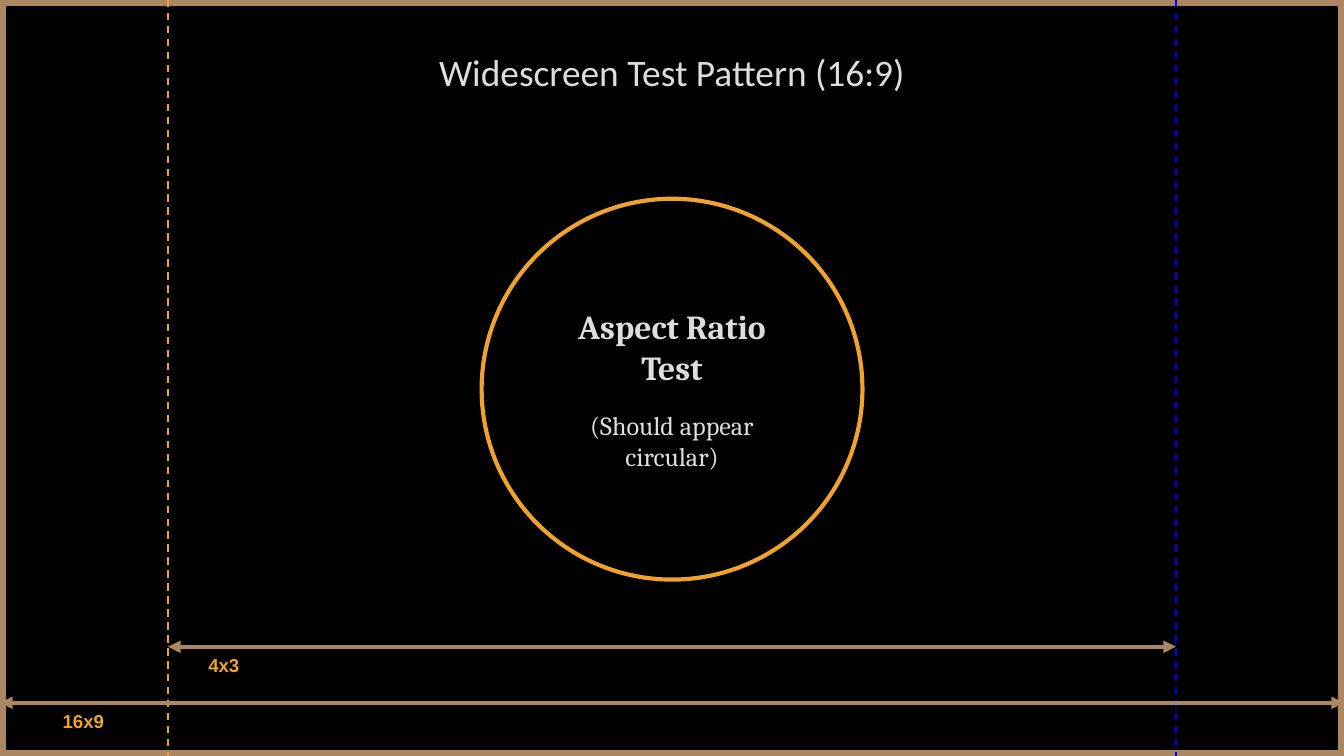
import pptx
import pptx.dml.color
import pptx.enum.dml
import pptx.enum.shapes
import pptx.enum.text
import pptx.oxml
import pptx.oxml.ns
import pptx.util

PX = 9525  # EMU per px, 96 px to the inch
WIDE, HIGH = 960, 540
TAN, GOLD, BLUE, PALE = "AC8660", "F0A22E", "0000FF", "DDDDDD"
SHAPE = pptx.enum.shapes.MSO_SHAPE
ALIGN = pptx.enum.text.PP_ALIGN
ANCHOR = pptx.enum.text.MSO_ANCHOR


def emu(*nums):
    return [pptx.util.Emu(round(n * PX)) for n in nums]


def rgb(code):
    return pptx.dml.color.RGBColor.from_string(code)


def write(para, text, font, size, color, bold=False, align=ALIGN.CENTER):
    para.alignment = align
    run = para.add_run()
    run.text = text
    run.font.name = font
    run.font.size = pptx.util.Pt(size)
    run.font.bold = bold
    run.font.color.rgb = rgb(color)


def outline(slide, kind, box, color, width):
    shape = slide.shapes.add_shape(kind, *emu(*box))
    shape.shadow.inherit = False
    shape.fill.background()
    shape.line.color.rgb = rgb(color)
    shape.line.width = pptx.util.Pt(width)
    return shape


def rule(slide, ends, color, width):
    line = slide.shapes.add_connector(
        pptx.enum.shapes.MSO_CONNECTOR.STRAIGHT, *emu(*ends))
    line.line.color.rgb = rgb(color)
    line.line.width = pptx.util.Pt(width)
    props = line.element.spPr
    props.append(pptx.oxml.parse_xml(
        "<a:effectLst %s/>" % pptx.oxml.ns.nsdecls("a")))
    return line


def title(slide, box):
    shape = slide.shapes.title
    shape.left, shape.top, shape.width, shape.height = emu(*box)
    frame = shape.text_frame
    frame.vertical_anchor = ANCHOR.TOP
    write(frame.paragraphs[0], "Widescreen Test Pattern (16:9)",
          "Calibri", 20, PALE)


def guide(slide, x, color):
    """Dashed upright line over the full height."""
    line = rule(slide, (x, 0, x, HIGH), color, 1)
    line.line.dash_style = pptx.enum.dml.MSO_LINE.DASH


def span(slide, left, right, y, text, indent):
    """Double-headed arrow with its ratio label below."""
    line = rule(slide, (left, y, right, y), TAN, 2.25)
    ends = line.line._get_or_add_ln()
    for name in ("headEnd", "tailEnd"):
        ends.append(pptx.oxml.parse_xml(
            '<a:%s %s type="triangle"/>' % (name, pptx.oxml.ns.nsdecls("a"))))
    label = slide.shapes.add_textbox(*emu(left + indent, y, 56, 26))
    frame = label.text_frame
    frame.word_wrap = True
    frame.auto_size = pptx.enum.text.MSO_AUTO_SIZE.SHAPE_TO_FIT_TEXT
    pad = pptx.util.Inches(0.05)
    frame.margin_left = frame.margin_right = pad
    frame.margin_top = frame.margin_bottom = pad
    write(frame.paragraphs[0], text, "Arial", 10, GOLD, True, ALIGN.LEFT)


def circle(slide, box):
    shape = outline(slide, SHAPE.OVAL, box, GOLD, 2.25)
    frame = shape.text_frame
    frame.word_wrap = True
    frame.vertical_anchor = ANCHOR.MIDDLE
    write(frame.paragraphs[0], "Aspect Ratio Test", "Cambria", 18, PALE, True)
    note = frame.add_paragraph()
    note.space_before = pptx.util.Pt(12)
    write(note, "(Should appear circular)", "Cambria", 14, PALE)


def main():
    deck = pptx.Presentation()
    deck.slide_width, deck.slide_height = emu(WIDE, HIGH)
    slide = deck.slides.add_slide(deck.slide_layouts[5])
    back = slide.background.fill
    back.solid()
    back.fore_color.rgb = rgb("000000")

    inset = (WIDE - HIGH * 4 // 3) // 2
    size = 272
    outline(slide, SHAPE.RECTANGLE, (0, 0, WIDE, HIGH), TAN, 6)
    title(slide, (72, 30, WIDE - 2 * 72, 88))
    guide(slide, inset, GOLD)
    guide(slide, WIDE - inset, BLUE)
    circle(slide, ((WIDE - size) // 2, 142, size, size))
    span(slide, 0, WIDE, 502, "16x9", 40)
    span(slide, inset, WIDE - inset, 462, "4x3", 24)
    deck.save("out.pptx")


if __name__ == "__main__":
    main()
